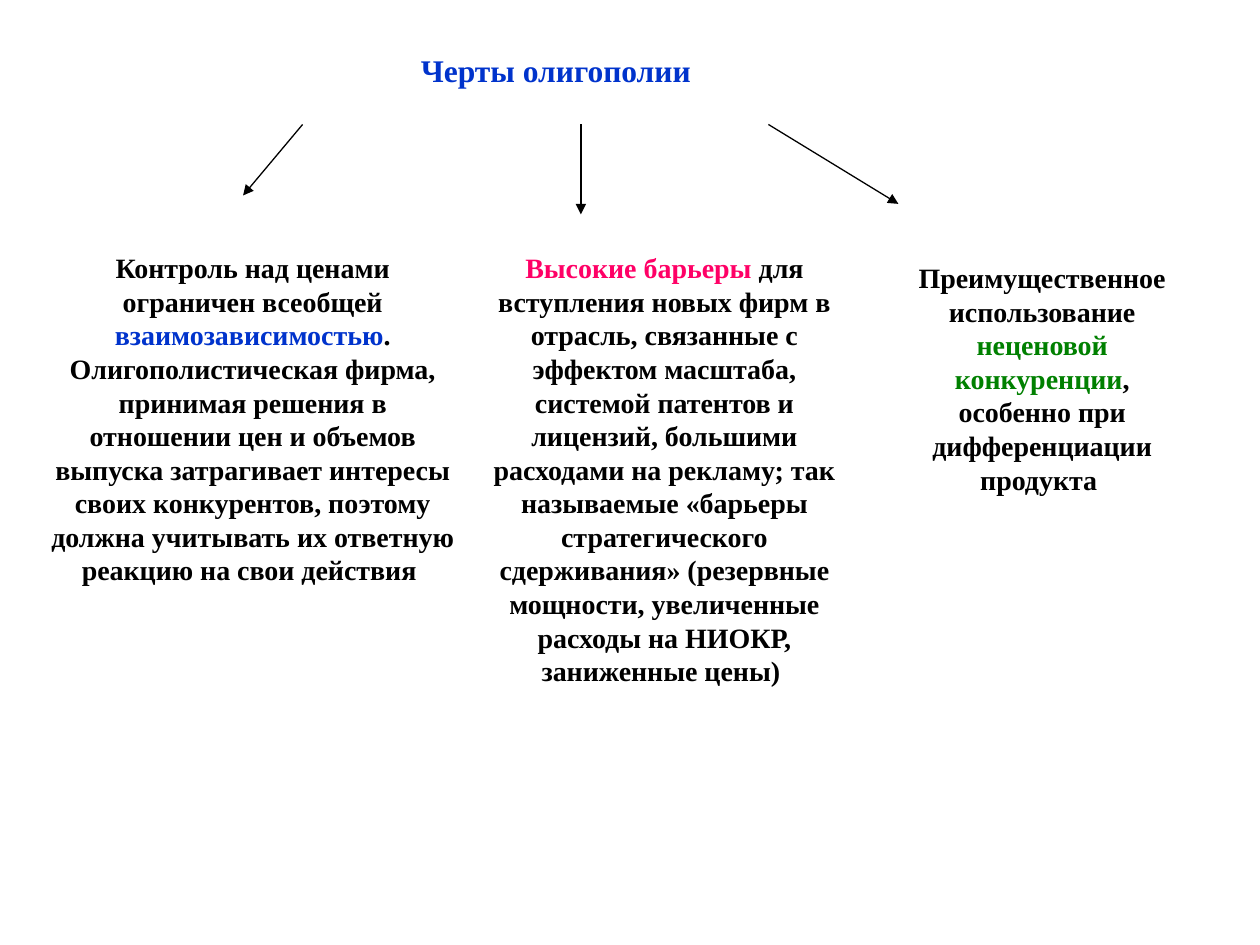
from pptx import Presentation
from pptx.dml.color import RGBColor
from pptx.enum.shapes import MSO_CONNECTOR
from pptx.enum.text import MSO_ANCHOR, MSO_AUTO_SIZE, PP_ALIGN
from pptx.oxml.ns import qn
from pptx.util import Cm, Pt
from lxml.etree import SubElement

HUES = {"ink": "000000", "blue": "0033CC", "pink": "FF0066", "green": "008000"}


def write(shape, runs, size=16, font="Times New Roman", bold=True):
    """Fill a shape with one centred paragraph of (text, hue) runs."""
    frame = shape.text_frame
    frame.word_wrap = True
    frame.auto_size = MSO_AUTO_SIZE.SHAPE_TO_FIT_TEXT
    frame.vertical_anchor = MSO_ANCHOR.TOP
    para = frame.paragraphs[0]
    para.alignment = PP_ALIGN.CENTER
    for text, hue in runs:
        run = para.add_run()
        run.text = text
        run.font.name = font
        run.font.size = Pt(size)
        run.font.bold = bold
        run.font.color.rgb = RGBColor.from_string(HUES[hue])


deck = Presentation()
deck.slide_width, deck.slide_height = Cm(25.4), Cm(19.05)
slide = deck.slides.add_slide(deck.slide_layouts[5])

# Title
title = slide.shapes.title
title.left, title.top = Cm(1.3), Cm(0.91)
title.width, title.height = Cm(19.81), Cm(1.02)
write(title, [("Черты олигополии", "blue")], size=18)

# Arrows from the title down to the columns
top = 2.51
for start, end, low in [(6.1, 4.9, 3.94), (11.71, 11.71, 4.32), (15.49, 18.11, 4.11)]:
    arrow = slide.shapes.add_connector(
        MSO_CONNECTOR.STRAIGHT, Cm(start), Cm(top), Cm(end), Cm(low))
    arrow.line.width = Pt(0.75)
    arrow.line.color.rgb = RGBColor.from_string(HUES["ink"])
    SubElement(arrow.line._get_or_add_ln(), qn("a:tailEnd"), type="triangle")
    SubElement(arrow._element.spPr, qn("a:effectLst"))

# Columns: left, top, width, height, runs
columns = [
    (0.69, 4.93, 8.81, 7.04, [
        ("Контроль над ценами ограничен всеобщей ", "ink"),
        ("взаимозависимостью", "blue"),
        (". Олигополистическая фирма, принимая решения в отношении цен и "
         "объемов выпуска затрагивает интересы своих конкурентов, поэтому "
         "должна учитывать их ответную реакцию на свои действия ", "ink")]),
    (9.7, 4.93, 7.39, 9.09, [
        ("Высокие барьеры", "pink"),
        (" для вступления новых фирм в отрасль, связанные с эффектом "
         "масштаба, системой патентов и лицензий, большими расходами на "
         "рекламу; так называемые «барьеры стратегического сдерживания» "
         "(резервные мощности, увеличенные расходы на НИОКР, заниженные "
         "цены) ", "ink")]),
    (17.91, 5.13, 6.2, 5, [
        ("Преимущественное использование ", "ink"),
        ("неценовой конкуренции", "green"),
        (", особенно при дифференциации продукта ", "ink")]),
]
for *place, runs in columns:
    write(slide.shapes.add_textbox(*map(Cm, place)), runs)

deck.save("out.pptx")
